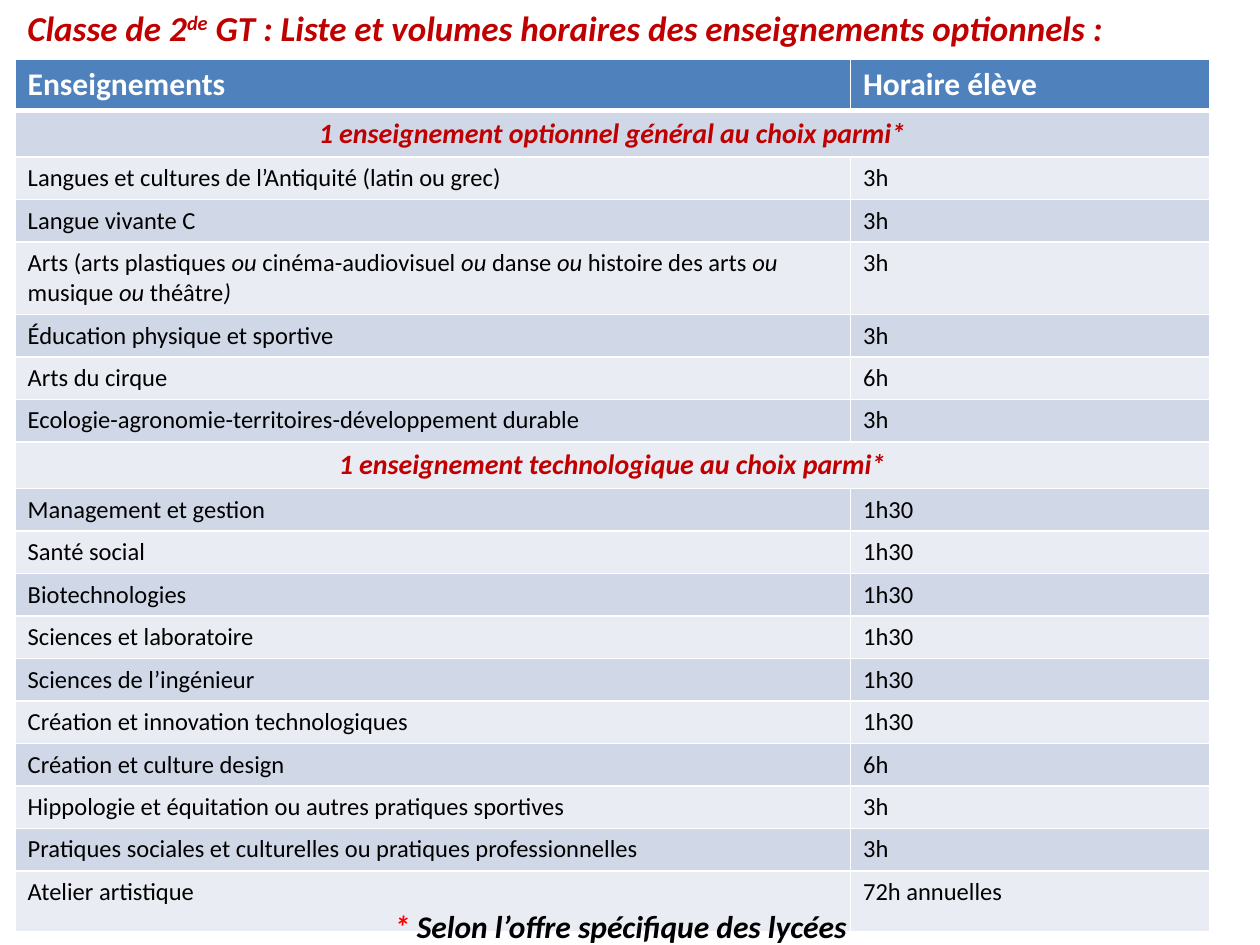
import dataclasses

import lxml.etree
import pptx
import pptx.dml.color
import pptx.enum.text
import pptx.oxml.ns
import pptx.util

Inches = pptx.util.Inches
CENTER = pptx.enum.text.PP_ALIGN.CENTER


@dataclasses.dataclass(frozen=True)
class Theme:
    font: str = "Calibri"
    white: str = "FFFFFF"
    black: str = "000000"
    accent: str = "C00000"
    star: str = "FF0000"
    header: str = "4F81BD"
    bands: tuple = ("E9ECF3", "D0D8E7")
    title_size: int = 20
    header_size: int = 18
    section_size: int = 16
    body_size: int = 14
    thin: float = 0.96
    thick: float = 3


THEME = Theme()
COLUMNS = (6.63, 2.85)
HEADINGS = ("Enseignements", "Horaire élève")
ROW_HEIGHT = 0.333
SECTION_HEIGHT = 0.37
# Each section: heading, then (subject, hours, row height).
# In a subject, "|" switches italics on and off.
SECTIONS = (
    ("1 enseignement optionnel général au choix parmi*", (
        ("Langues et cultures de l’Antiquité (latin ou grec)", "3h", ROW_HEIGHT),
        ("Langue vivante C", "3h", ROW_HEIGHT),
        ("Arts (arts plastiques |ou| cinéma-audiovisuel |ou| danse |ou| histoire des arts "
         "|ou |musique |ou |théâtre|)", "3h", 0.57),
        ("Éducation physique et sportive", "3h", ROW_HEIGHT),
        ("Arts du cirque", "6h", ROW_HEIGHT),
        ("Ecologie-agronomie-territoires-développement durable", "3h", ROW_HEIGHT),
    )),
    ("1 enseignement technologique au choix parmi*", (
        ("Management et gestion", "1h30", ROW_HEIGHT),
        ("Santé social", "1h30", ROW_HEIGHT),
        ("Biotechnologies", "1h30", ROW_HEIGHT),
        ("Sciences et laboratoire", "1h30", ROW_HEIGHT),
        ("Sciences de l’ingénieur", "1h30", ROW_HEIGHT),
        ("Création et innovation technologiques", "1h30", ROW_HEIGHT),
        ("Création et culture design", "6h", ROW_HEIGHT),
        ("Hippologie et équitation ou autres pratiques sportives", "3h", ROW_HEIGHT),
        ("Pratiques sociales et culturelles ou pratiques professionnelles", "3h", ROW_HEIGHT),
        ("Atelier artistique", "72h annuelles", 0.48),
    )),
)


def rgb(color):
    return pptx.dml.color.RGBColor.from_string(color)


def set_font(font, size, color, bold=False, italic=False):
    font.name = THEME.font
    font.size = pptx.util.Pt(size)
    font.color.rgb = rgb(color)
    font.bold = bold
    font.italic = italic


def add_span(para, text):
    span = para.add_run()
    span.text = text
    return span


def set_borders(cell, top, bottom):
    """Draw white cell borders; top and bottom are widths in points."""
    properties = cell._tc.get_or_add_tcPr()
    widths = {"L": THEME.thin, "R": THEME.thin, "T": top, "B": bottom}
    for place, (side, width) in enumerate(widths.items()):
        line = lxml.etree.Element(pptx.oxml.ns.qn(f"a:ln{side}"), w=str(int(pptx.util.Pt(width))))
        fill = lxml.etree.SubElement(line, pptx.oxml.ns.qn("a:solidFill"))
        lxml.etree.SubElement(fill, pptx.oxml.ns.qn("a:srgbClr"), val=THEME.white)
        properties.insert(place, line)


def fill_cell(cell, text, color, **style):
    cell.fill.solid()
    cell.fill.fore_color.rgb = rgb(color)
    para = cell.text_frame.paragraphs[0]
    set_font(para.font, **style)
    parts = text.split("|")
    for place, part in enumerate(parts):
        span = add_span(para, part)
        if len(parts) > 1:
            span.font.italic = place % 2 == 1
    return para


def add_timetable(page, left, top, width, height):
    rows = [("header", HEADINGS, 0.4)]
    for heading, subjects in SECTIONS:
        rows.append(("section", (heading, ""), SECTION_HEIGHT))
        rows += [("body", (subject, hours), tall) for subject, hours, tall in subjects]
    styles = {
        "header": dict(size=THEME.header_size, color=THEME.white, bold=True),
        "section": dict(size=THEME.section_size, color=THEME.accent, bold=True, italic=True),
        "body": dict(size=THEME.body_size, color=THEME.black),
    }
    table = page.shapes.add_table(len(rows), len(COLUMNS), left, top, width, height).table
    for column, wide in zip(table.columns, COLUMNS):
        column.width = Inches(wide)
    for index, (kind, texts, tall) in enumerate(rows):
        table.rows[index].height = Inches(tall)
        fill = THEME.header if kind == "header" else THEME.bands[index % 2]
        for column, text in enumerate(texts):
            cell = table.cell(index, column)
            style = dict(styles[kind])
            cell_text_color = style.pop("color")
            para = fill_cell_with(cell, text, fill, cell_text_color, style)
            if kind == "section":
                para.alignment = CENTER
            set_borders(cell, THEME.thick if index == 1 else THEME.thin,
                        THEME.thick if index == 0 else THEME.thin)
        if kind == "section":
            table.cell(index, 0).merge(table.cell(index, 1))


def fill_cell_with(cell, text, fill, text_color, style):
    """Fill a cell; "|" in the text switches italics on and off."""
    cell.fill.solid()
    cell.fill.fore_color.rgb = rgb(fill)
    para = cell.text_frame.paragraphs[0]
    set_font(para.font, color=text_color, **style)
    parts = text.split("|") if text else []
    for place, part in enumerate(parts):
        span = add_span(para, part)
        if place % 2:
            span.font.italic = True
    return para


def add_text_line(page, left, top, width, height, size, color):
    """Add a bold italic text box and return its empty paragraph."""
    box = page.shapes.add_textbox(left, top, width, height)
    box.text_frame.word_wrap = True
    para = box.text_frame.paragraphs[0]
    set_font(para.font, size, color, bold=True, italic=True)
    return para


def add_title(page, left, top, width, height):
    para = add_text_line(page, left, top, width, height, THEME.title_size, THEME.accent)
    add_span(para, "Classe de 2")
    add_span(para, "de").font._element.set("baseline", "30000")
    add_span(para, " GT : Liste et volumes horaires des enseignements optionnels :")


def add_footnote(page, left, top, width, height):
    para = add_text_line(page, left, top, width, height, THEME.header_size, THEME.black)
    para.alignment = CENTER
    para.space_before = pptx.util.Pt(9)
    add_span(para, "*").font.color.rgb = rgb(THEME.star)
    add_span(para, " Selon l’offre spécifique des lycées")


def main():
    deck = pptx.Presentation()
    deck.slide_width, deck.slide_height = Inches(10), Inches(7.5)
    page = deck.slides.add_slide(deck.slide_layouts[6])
    left = Inches(0.12)
    add_timetable(page, left, Inches(0.47), Inches(sum(COLUMNS)), Inches(6.84))
    add_footnote(page, left, Inches(7.15), Inches(9.61), Inches(0.8))
    add_title(page, left, Inches(0), Inches(8.74), Inches(0.76))
    deck.save("out.pptx")


if __name__ == "__main__":
    main()
